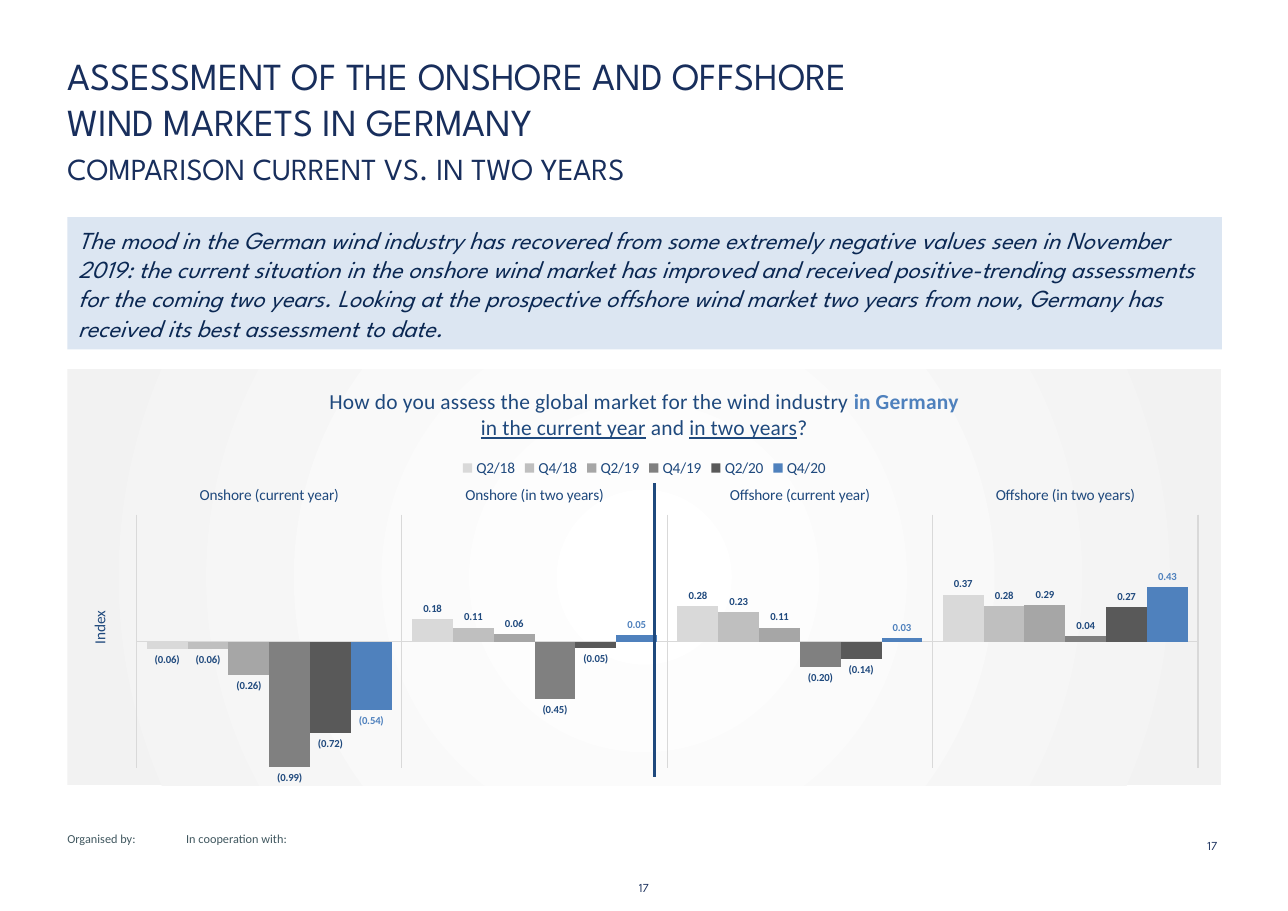
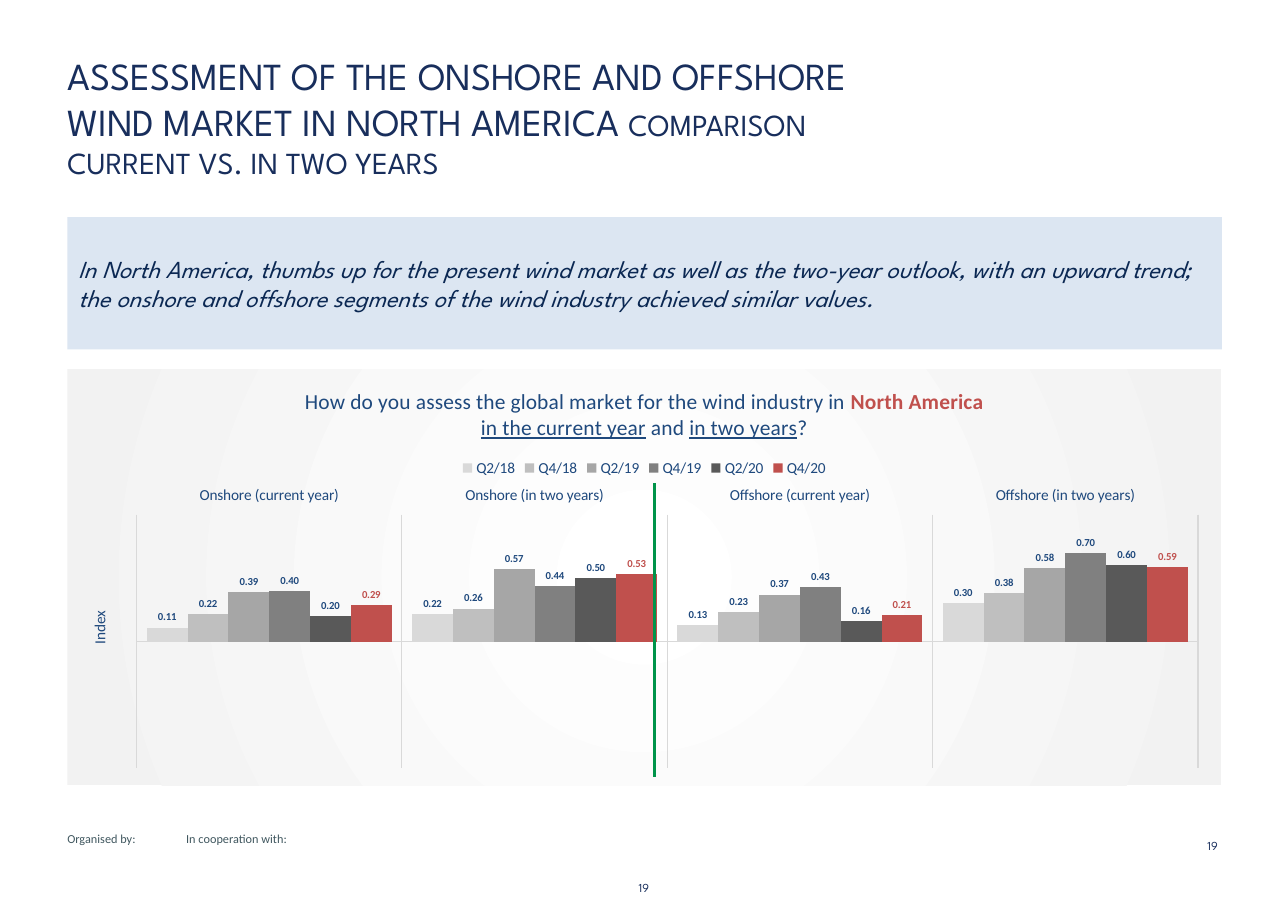
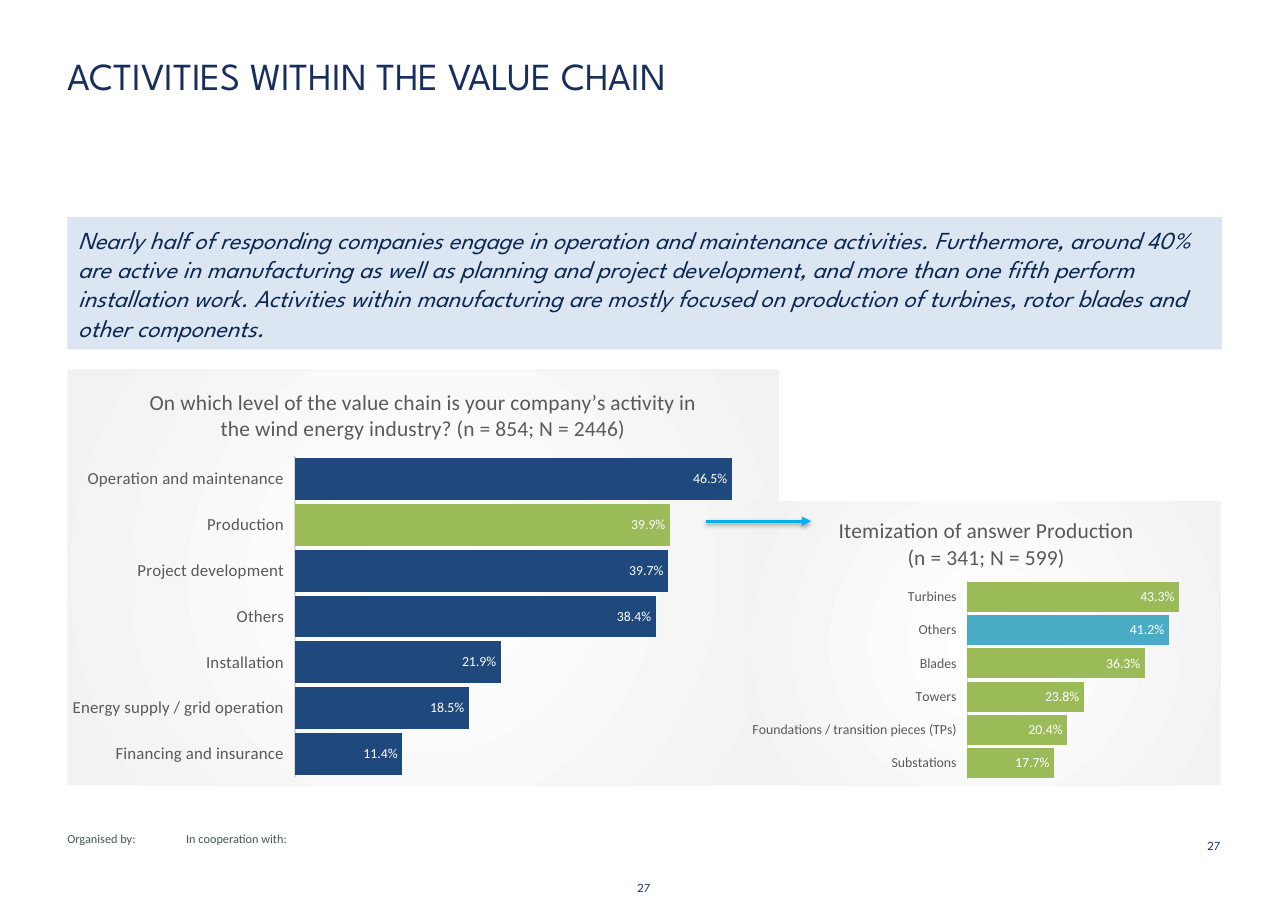
"""Build three slides on wind market sentiment and value chain activities."""
from pptx import Presentation
from pptx import util as u
from pptx.chart import data
from pptx.dml.color import RGBColor
from pptx.enum import chart as ch, shapes, text
from pptx.oxml import parse_xml
from pptx.oxml.ns import nsdecls, qn

Pt = u.Pt


class Theme:
    head, body = "League Spartan", "Calibri"
    navy, ink, blue, slate = "182E5C", "0B2853", "1F497D", "40575F"
    sky, red, green, lime = "4F81BD", "C0504D", "00944A", "9BBB59"
    teal, cyan, pale, white = "4BACC6", "00B0F0", "DCE6F2", "FFFFFF"
    rule, dusk, mist = "D9D9D9", "595959", "F2F2F2"
    greys = ["D9D9D9", "BFBFBF", "A6A6A6", "808080", "595959"]
    title = dict(name=head, size=25, color=navy)
    sub = dict(title, size=20)
    lead = dict(name=head, size=16, color=ink, italic=True)
    page = dict(name=head, size=8, color=navy)
    foot = dict(name=body, size=8, color=slate)
    base = dict(name=body, size=10)
    ask = dict(name=body, size=14, color=blue, bold=False)
    axis = dict(ask, size=10)
    mark = dict(ask, size=7, bold=True)
    topic = dict(ask, color=dusk)
    share = dict(ask, size=9, color=white)


T = Theme


def style(font, look):
    for key, val in look.items():
        if key == "color":
            font.color.rgb = RGBColor.from_string(val)
        else:
            setattr(font, key, Pt(val) if key == "size" else val)


def write(frame, paras, **form):
    for key, val in form.items():
        setattr(frame, key, val)
    for i, runs in enumerate(paras):
        para = frame.paragraphs[0] if i == 0 else frame.add_paragraph()
        for words, look in runs:
            run = para.add_run()
            run.text = words
            style(run.font, look)


FLUSH = dict(margin_left=0, margin_right=0, margin_top=0, margin_bottom=0)
LEFT, WIDE = 44, 754.5
TERMS = ["Q2/18", "Q4/18", "Q2/19", "Q4/19", "Q2/20", "Q4/20"]
MARKETS = ["Onshore (current year)", "Onshore (in two years)",
           "Offshore (current year)", "Offshore (in two years)"]
LINED = dict(T.ask, underline=True)
SPAN = [("in the current year", LINED), (" and ", T.ask),
        ("in two years", LINED), ("?", T.ask)]
COLUMN = dict(kind=ch.XL_CHART_TYPE.COLUMN_CLUSTERED, box=(LEFT, 241.2, 754, 272),
              plot=(0.06, 0.35, 0.92, 0.61), cats=MARKETS, names=TERMS, gap=50,
              low=-1, high=1, form="0.00;(0.00)", axis=T.axis, mark=T.mark,
              place=ch.XL_LABEL_POSITION.OUTSIDE_END, dots={})
BAR = dict(kind=ch.XL_CHART_TYPE.BAR_CLUSTERED, names=["Series 1"], gap=10,
           low=0, high=0.5, form="0.0%", mark=T.share,
           place=ch.XL_LABEL_POSITION.INSIDE_END)
SPLIT = dict(line=(427.7, 316, 427.7, 507.6), arrow=False)
ASK = "How do you assess the global market for the wind industry "

pages = [
    dict(
        SPLIT, num="17", wide=519, tint=T.blue,
        title=[[("ASSESSMENT OF THE ONSHORE AND OFFSHORE WIND MARKETS IN GERMANY", T.title)],
               [("COMPARISON CURRENT VS. IN TWO YEARS", T.sub)]],
        lead="The mood in the German wind industry has recovered from some extremely "
             "negative values seen in November 2019: the current situation in the onshore "
             "wind market has improved and received positive-trending assessments for the "
             "coming two years. Looking at the prospective offshore wind market two years "
             "from now, Germany has received its best assessment to date.",
        charts=[dict(
            COLUMN, fills=T.greys + [T.sky],
            title=[[(ASK, T.ask), ("in Germany", dict(T.ask, color=T.sky, bold=True))], SPAN],
            rows=[(-0.06, 0.18, 0.28, 0.37), (-0.06, 0.11, 0.23, 0.28),
                  (-0.26, 0.06, 0.11, 0.29), (-0.99, -0.45, -0.2, 0.04),
                  (-0.72, -0.05, -0.14, 0.27), (-0.54, 0.05, 0.03, 0.43)])]),
    dict(
        SPLIT, num="19", wide=549, tint=T.green,
        title=[[("ASSESSMENT OF THE ONSHORE AND OFFSHORE WIND MARKET IN NORTH AMERICA ", T.title),
                ("COMPARISON CURRENT VS. IN TWO YEARS", T.sub)]],
        lead="In North America, thumbs up for the present wind market as well as the "
             "two-year outlook, with an upward trend; the onshore and offshore segments "
             "of the wind industry achieved similar values.",
        charts=[dict(
            COLUMN, fills=T.greys + [T.red],
            title=[[(ASK + "in ", T.ask),
                    ("North America", dict(T.ask, color=T.red, bold=True))], SPAN],
            rows=[(0.11, 0.22, 0.13, 0.3), (0.22, 0.26, 0.23, 0.38),
                  (0.39, 0.57, 0.37, 0.58), (0.4, 0.44, 0.43, 0.7),
                  (0.2, 0.5, 0.16, 0.6), (0.29, 0.53, 0.21, 0.59)])]),
    dict(
        num="27", wide=519, tint=T.cyan, line=(461.5, 340.6, 530, 340.6), arrow=True,
        title=[[("ACTIVITIES WITHIN THE VALUE CHAIN", T.title)]],
        lead="Nearly half of responding companies engage in operation and maintenance "
             "activities. Furthermore, around 40% are active in manufacturing as well as "
             "planning and project development, and more than one fifth perform "
             "installation work. Activities within manufacturing are mostly focused on "
             "production of turbines, rotor blades and other components.",
        charts=[
            dict(BAR, box=(LEFT, 241.2, 465, 272), plot=(0.32, 0.21, 0.66, 0.77),
                 title=[[("On which level of the value chain is your company’s activity in "
                          "the wind energy industry? (n = 854; N = 2446)", T.topic)]],
                 cats=["Financing and insurance", "Energy supply / grid operation",
                       "Installation", "Others", "Project development", "Production",
                       "Operation and maintenance"],
                 rows=[(0.114, 0.185, 0.219, 0.384, 0.397, 0.399, 0.465)],
                 fills=[T.blue], dots={5: T.lime}, axis=dict(T.topic, size=11)),
            dict(BAR, box=(491, 327.6, 307, 185.6), plot=(0.46, 0.28, 0.52, 0.7),
                 title=[[("Itemization of answer Production", T.topic)],
                        [("(n = 341; N = 599)", T.topic)]],
                 cats=["Substations", "Foundations / transition pieces (TPs)", "Towers",
                       "Blades", "Others", "Turbines"],
                 rows=[(0.177, 0.204, 0.238, 0.363, 0.412, 0.433)],
                 fills=[T.lime], dots={4: T.teal}, axis=dict(T.topic, size=9))]),
]

deck = Presentation()
deck.slide_width, deck.slide_height = Pt(841.7), Pt(595.4)

for page in pages:
    slide = deck.slides.add_slide(deck.slide_layouts[5])
    pool = slide.shapes

    title = pool.title
    title.left, title.top, title.width, title.height = map(Pt, (LEFT, 34, page["wide"], 83))
    write(title.text_frame, page["title"], word_wrap=True, auto_size=text.MSO_AUTO_SIZE.NONE,
          vertical_anchor=text.MSO_ANCHOR.TOP, **FLUSH)
    for i, para in enumerate(title.text_frame.paragraphs):
        para.alignment = text.PP_ALIGN.LEFT
        para.space_before = Pt(4 if i else 0)

    for words, look, box, form, side in [
        (page["num"], T.page, (782, 544.3, 33, 32), {}, text.PP_ALIGN.LEFT),
        (page["num"], T.page, (406.8, 575.3, 28, 13), FLUSH, text.PP_ALIGN.CENTER),
        ("Organised by:", T.foot, (LEFT, 543, 57.6, 9.4), FLUSH, text.PP_ALIGN.LEFT),
        ("In cooperation with:", T.foot, (121.7, 543, 83, 9.4), FLUSH, text.PP_ALIGN.LEFT),
    ]:
        note = pool.add_textbox(*map(Pt, box)).text_frame
        write(note, [[(words, look)]], word_wrap=True, **form)
        note.paragraphs[0].alignment = side

    for item in page["charts"]:
        feed = data.CategoryChartData()
        feed.categories = item["cats"]
        for name, row in zip(item["names"], item["rows"]):
            feed.add_series(name, row)
        chart = pool.add_chart(item["kind"], *map(Pt, item["box"]), feed).chart
        style(chart.font, T.base)
        chart.has_title = True
        write(chart.chart_title.text_frame, item["title"])
        chart.chart_title.include_in_layout = False

        cat, val = chart.category_axis, chart.value_axis
        style(cat.tick_labels.font, item["axis"])
        cat.major_tick_mark = ch.XL_TICK_MARK.NONE
        lines = [cat.format.line]
        val.has_major_gridlines = val.visible = False
        val.minimum_scale, val.maximum_scale = item["low"], item["high"]
        many = len(item["names"]) > 1
        chart.has_legend = many
        if many:
            cat.tick_label_position = ch.XL_TICK_LABEL_POSITION.HIGH
            cat.has_major_gridlines = True
            lines.append(cat.major_gridlines.format.line)
            chart.legend.position = ch.XL_LEGEND_POSITION.TOP
            chart.legend.include_in_layout = False
            style(chart.legend.font, T.axis)
            val.has_title = True
            write(val.axis_title.text_frame, [[("Index", T.axis)]])
        else:
            cat.tick_label_position = ch.XL_TICK_LABEL_POSITION.LOW
        for line in lines:
            line.color.rgb, line.width = RGBColor.from_string(T.rule), Pt(0.75)

        plot = chart.plots[0]
        plot.gap_width, plot.overlap, plot.vary_by_categories = item["gap"], 0, False
        for row, tint in zip(plot.series, item["fills"]):
            row.invert_if_negative = False
            fills = [(row.format.fill, tint)]
            fills += [(row.points[i].format.fill, hue) for i, hue in item["dots"].items()]
            for fill, hue in fills:
                fill.solid()
                fill.fore_color.rgb = RGBColor.from_string(hue)
            tags = row.data_labels
            tags.show_value, tags.position = True, item["place"]
            tags.number_format, tags.number_format_is_linked = item["form"], False
            last = many and row.name == TERMS[-1]
            style(tags.font, dict(item["mark"], color=tint) if last else item["mark"])

        root = chart.element.find(qn("c:chart"))
        root.addnext(parse_xml(
            f'<c:spPr {nsdecls("c", "a")}><a:gradFill><a:gsLst>'
            f'<a:gs pos="0"><a:srgbClr val="{T.white}"/></a:gs>'
            f'<a:gs pos="100000"><a:srgbClr val="{T.mist}"/></a:gs></a:gsLst>'
            '<a:path path="circle"><a:fillToRect l="50000" t="50000" r="50000" b="50000"/>'
            '</a:path></a:gradFill><a:ln><a:noFill/></a:ln></c:spPr>'))
        area = root.find(qn("c:plotArea"))
        for old in area.findall(qn("c:layout")):
            area.remove(old)
        spots = "".join(f'<c:{key} val="{size}"/>' for key, size in zip("xywh", item["plot"]))
        area.insert(0, parse_xml(
            f'<c:layout {nsdecls("c")}><c:manualLayout><c:layoutTarget val="inner"/>'
            f'<c:xMode val="edge"/><c:yMode val="edge"/>{spots}</c:manualLayout></c:layout>'))

    band = pool.add_shape(shapes.MSO_SHAPE.RECTANGLE, *map(Pt, (LEFT, 142, WIDE, 86.4)))
    band.shadow.inherit = False
    band.fill.solid()
    band.fill.fore_color.rgb = RGBColor.from_string(T.pale)
    band.line.fill.background()
    write(band.text_frame, [[(page["lead"], T.lead)]], word_wrap=True,
          vertical_anchor=text.MSO_ANCHOR.MIDDLE)
    band.text_frame.paragraphs[0].alignment = text.PP_ALIGN.LEFT

    link = pool.add_connector(shapes.MSO_CONNECTOR.STRAIGHT, *map(Pt, page["line"]))
    link.line.color.rgb, link.line.width = RGBColor.from_string(page["tint"]), Pt(2)
    props = link.element.spPr
    shade = ""
    if page["arrow"]:
        props.find(qn("a:ln")).append(
            parse_xml(f'<a:tailEnd {nsdecls("a")} type="triangle"/>'))
        shade = ('<a:outerShdw blurRad="39370" dist="20320" dir="5400000" rotWithShape="0">'
                 '<a:srgbClr val="000000"><a:alpha val="38000"/></a:srgbClr></a:outerShdw>')
    props.append(parse_xml(f'<a:effectLst {nsdecls("a")}>{shade}</a:effectLst>'))

deck.save("out.pptx")
